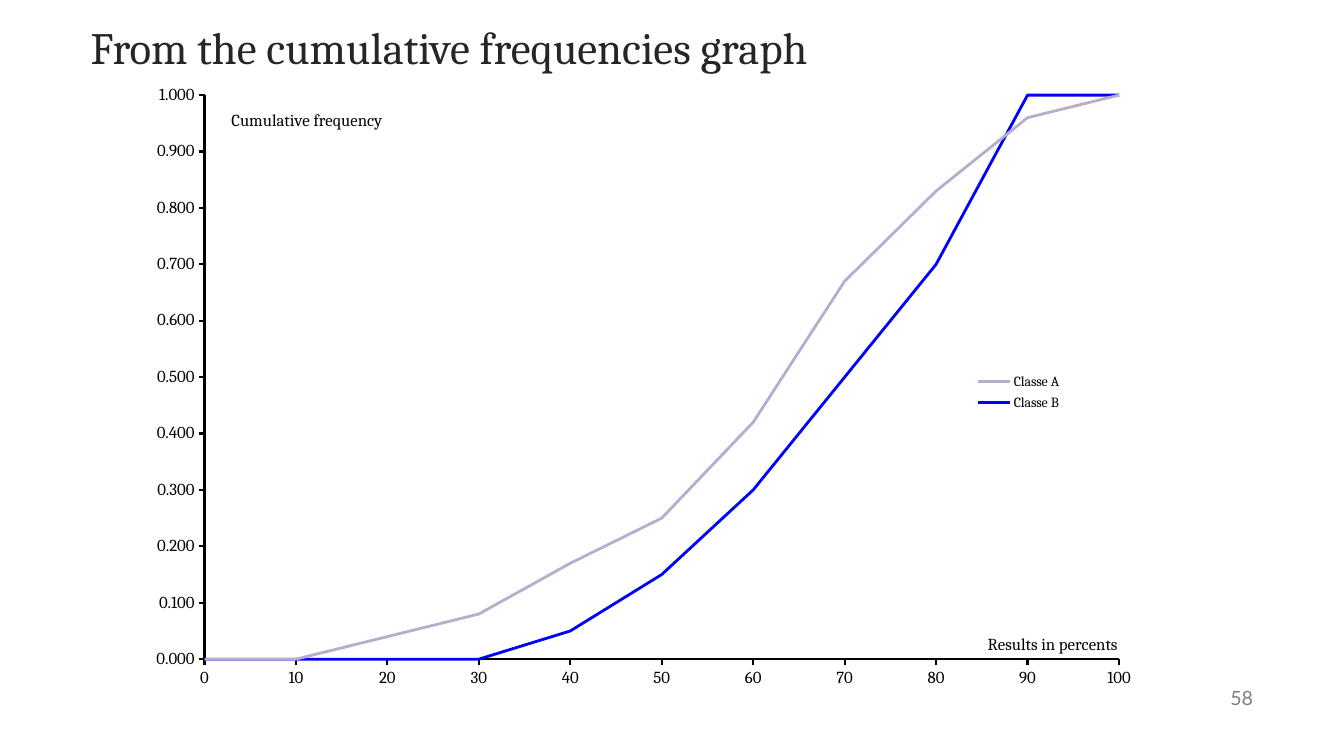
from dataclasses import dataclass

from lxml import etree
from pptx import Presentation
from pptx import util as u
from pptx.chart.data import XyChartData
from pptx.dml.color import RGBColor
from pptx.enum import chart as charts, text
from pptx.oxml.ns import qn

HEADING = "From the cumulative frequencies graph"
PAGE = "58"
CLASSES = [
    {"name": "Classe A", "color": "B8ADCD",
     "frequencies": [0, 0, 0.04, 0.08, 0.17, 0.25, 0.42, 0.67, 0.83, 0.96, 1]},
    {"name": "Classe B", "color": "0000FF",
     "frequencies": [0, 0, 0, 0, 0.05, 0.15, 0.3, 0.5, 0.7, 1, 1]},
]
STEP = 10
RESULTS_AXIS = {"title": "Results in percents", "max": 100, "unit": STEP,
                "format": "0", "percents": {"x": 82.3, "y": 88.5}}
FREQUENCY_AXIS = {"title": "Cumulative frequency", "max": 1, "unit": 0.1,
                  "format": "0.000", "percents": {"x": 7.8, "y": 3.7}}
LEGEND_PERCENTS = {"x": 80.9, "y": 46.1, "w": 9.5, "h": 7.6}
PLOT_PERCENTS = {"x": 5.45, "y": 1.85, "w": 90.1, "h": 91.3}


@dataclass(frozen=True)
class Theme:
    serif: str = "Cambria"
    sans: str = "Lato"
    heading: str = "262626"
    ink: str = "000000"
    page: str = "808080"
    heading_size: int = 32
    page_size: int = 14
    axis_size: int = 12
    legend_size: int = 10
    axis_width: float = 1.5
    series_width: float = 2


THEME = Theme()


def style(font, name, size, color):
    font.name = name
    font.size = u.Pt(size)
    font.bold = False
    font.color.rgb = RGBColor.from_string(color)


def style_line(line, color, width):
    line.color.rgb = RGBColor.from_string(color)
    line.width = u.Pt(width)


def place(element, percents, inner=False):
    for stale in element.findall(qn("c:layout")):
        element.remove(stale)
    layout = etree.Element(qn("c:layout"))
    manual = etree.SubElement(layout, qn("c:manualLayout"))
    if inner:
        etree.SubElement(manual, qn("c:layoutTarget"), val="inner")
    for side in "xy":
        etree.SubElement(manual, qn(f"c:{side}Mode"), val="edge")
    for side, percent in percents.items():
        etree.SubElement(manual, qn(f"c:{side}"), val=str(round(percent / 100, 4)))
    overlay = element.find(qn("c:overlay"))
    if overlay is None:
        element.insert(0, layout)
    else:
        overlay.addprevious(layout)


def format_axis(axis, content):
    axis.minimum_scale = 0
    axis.maximum_scale = content["max"]
    axis.major_unit = content["unit"]
    axis.has_major_gridlines = False
    axis.major_tick_mark = charts.XL_TICK_MARK.OUTSIDE
    axis.minor_tick_mark = charts.XL_TICK_MARK.NONE
    axis.tick_labels.number_format = content["format"]
    axis.tick_labels.number_format_is_linked = False
    style(axis.tick_labels.font, THEME.serif, THEME.axis_size, THEME.ink)
    style_line(axis.format.line, THEME.ink, THEME.axis_width)
    caption = axis.axis_title.text_frame
    caption.text = content["title"]
    caption._txBody.bodyPr.set("rot", "0")
    caption._txBody.bodyPr.set("vert", "horz")
    style(caption.paragraphs[0].runs[0].font, THEME.serif, THEME.axis_size, THEME.ink)
    place(axis.axis_title._element, content["percents"])


def add_heading(slide):
    heading = slide.shapes.title
    heading.left, heading.top = u.Cm(2.03), u.Cm(0.33)
    heading.width, heading.height = u.Cm(29.79), u.Cm(1.7)
    frame = heading.text_frame
    frame.text = HEADING
    frame.vertical_anchor = text.MSO_ANCHOR.MIDDLE
    frame.paragraphs[0].alignment = text.PP_ALIGN.LEFT
    style(frame.paragraphs[0].runs[0].font, THEME.serif, THEME.heading_size, THEME.heading)


def add_frequencies(slide):
    data = XyChartData()
    for group in CLASSES:
        points = data.add_series(group["name"])
        for index, frequency in enumerate(group["frequencies"]):
            points.add_data_point(index * STEP, frequency)
    frequencies = slide.shapes.add_chart(
        charts.XL_CHART_TYPE.XY_SCATTER_LINES_NO_MARKERS,
        u.Cm(3.76), u.Cm(2.11), u.Cm(25.58), u.Cm(15.57), data).chart
    frequencies.has_title = False
    style(frequencies.font, THEME.serif, THEME.legend_size, THEME.ink)
    format_axis(frequencies.category_axis, RESULTS_AXIS)
    format_axis(frequencies.value_axis, FREQUENCY_AXIS)
    plot = frequencies.plots[0]
    plot.vary_by_categories = False
    for curve, group in zip(plot.series, CLASSES):
        curve.smooth = False
        curve.marker.style = charts.XL_MARKER_STYLE.NONE
        style_line(curve.format.line, group["color"], THEME.series_width)
    frequencies.has_legend = True
    legend = frequencies.legend
    legend.position = charts.XL_LEGEND_POSITION.RIGHT
    legend.include_in_layout = False
    style(legend.font, THEME.serif, THEME.legend_size, THEME.ink)
    place(legend._element, LEGEND_PERCENTS)
    place(frequencies._chartSpace.chart.plotArea, PLOT_PERCENTS, inner=True)


def add_page(slide):
    page = slide.shapes.add_textbox(u.Cm(23.93), u.Cm(17.07), u.Cm(7.9), u.Cm(1.02))
    frame = page.text_frame
    frame.word_wrap = True
    frame.vertical_anchor = text.MSO_ANCHOR.MIDDLE
    frame.text = PAGE
    frame.paragraphs[0].alignment = text.PP_ALIGN.RIGHT
    style(frame.paragraphs[0].runs[0].font, THEME.sans, THEME.page_size, THEME.page)


def main():
    deck = Presentation()
    deck.slide_width, deck.slide_height = u.Cm(33.87), u.Cm(19.05)
    slide = deck.slides.add_slide(deck.slide_layouts.get_by_name("Title Only"))
    add_heading(slide)
    add_frequencies(slide)
    add_page(slide)
    deck.save("out.pptx")


if __name__ == "__main__":
    main()
